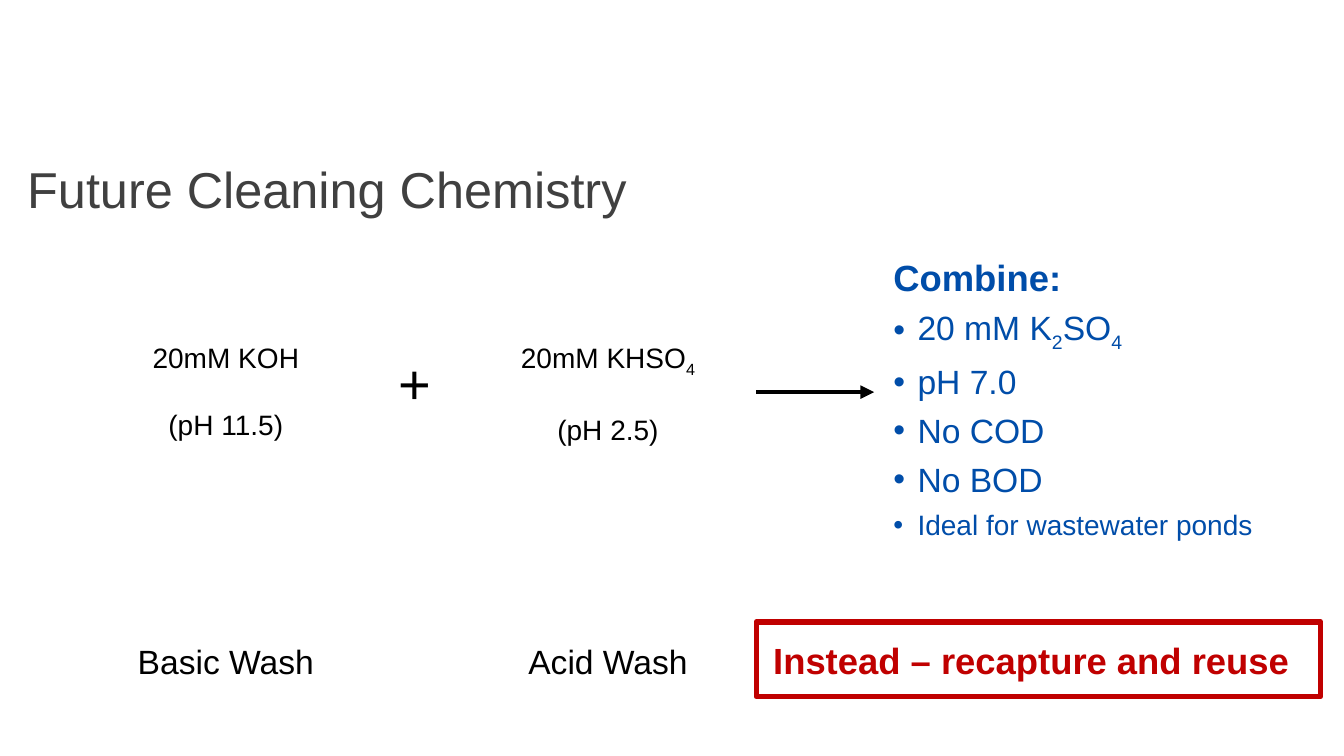
from lxml import etree
from pptx import Presentation
from pptx import util as u
from pptx.dml.color import RGBColor
from pptx.enum import shapes, text
from pptx.oxml.ns import qn

FONT = "Arial"
COLORS = {
    "title": "404040",
    "body": "000000",
    "combine": "004DA9",
    "alert": "C00000",
}
LEFT, CENTER = text.PP_ALIGN.LEFT, text.PP_ALIGN.CENTER


def color(name):
    return RGBColor.from_string(COLORS[name])


def place(shape, box):
    shape.left, shape.top, shape.width, shape.height = map(u.Inches, box)


def set_bullet(para, tint=None, indent=0.0):
    """Give the paragraph a hanging bullet, or none when no tint is named."""
    props = para._p.get_or_add_pPr()
    props.set("marL", str(u.Inches(indent)))
    props.set("indent", str(-u.Inches(indent)))
    if tint is None:
        etree.SubElement(props, qn("a:buNone"))
        return
    bullet_color = etree.SubElement(props, qn("a:buClr"))
    etree.SubElement(bullet_color, qn("a:srgbClr"), val=COLORS[tint])
    etree.SubElement(props, qn("a:buFont"), typeface=FONT)
    etree.SubElement(props, qn("a:buChar"), char="•")


def write(para, words, size=20, tint="body", bold=False, align=LEFT, before=0, line=1.0):
    """Fill a paragraph; parts between underscores become subscripts."""
    para.alignment = align
    para.space_before = u.Pt(before)
    para.line_spacing = line
    for index, part in enumerate(words.split("_")):
        if not part:
            continue
        span = para.add_run()
        span.text = part
        span.font.name = FONT
        span.font.size = u.Pt(size)
        span.font.bold = bold
        span.font.color.rgb = color(tint)
        if index % 2:
            span.font._element.set("baseline", "-25000")


def add_label(parent, box, lines, gap=0, **style):
    label = parent.add_textbox(*map(u.Inches, box))
    frame = label.text_frame
    frame.word_wrap = True
    for index, words in enumerate(lines):
        para = frame.add_paragraph() if index else frame.paragraphs[0]
        write(para, words, before=gap if index else 0, **style)


def add_title(page, box):
    title = page.shapes.title
    place(title, box)
    frame = title.text_frame
    frame.auto_size = text.MSO_AUTO_SIZE.NONE
    frame.vertical_anchor = text.MSO_ANCHOR.MIDDLE
    write(frame.paragraphs[0], "Future Cleaning Chemistry", size=36, tint="title", line=0.9)


def add_wash(page, box, solution, acidity, name):
    """Place a wash solution at the top of the box and its name at the foot."""
    left, top, width, height = box
    add_label(page.shapes, (left, top, width, 1.1), [solution, acidity], gap=24, align=CENTER)
    add_label(page.shapes, (left, top + height - 0.5, width, 0.5), [name], size=24, align=CENTER)


def add_arrow(page, left, right, height):
    arrow = page.shapes.add_connector(
        shapes.MSO_CONNECTOR.STRAIGHT,
        u.Inches(left), u.Inches(height), u.Inches(right), u.Inches(height))
    arrow.line.color.rgb = color("body")
    arrow.line.width = u.Pt(3.25)
    etree.SubElement(arrow.line._get_or_add_ln(), qn("a:tailEnd"), type="triangle")
    etree.SubElement(arrow._element.spPr, qn("a:effectLst"))


def add_combine_list(page, box):
    body = page.placeholders[1]
    place(body, box)
    frame = body.text_frame
    frame.auto_size = text.MSO_AUTO_SIZE.NONE
    heading = frame.paragraphs[0]
    set_bullet(heading)
    write(heading, "Combine:", size=26, tint="combine", bold=True)
    results = [("20 mM K_2_SO_4_", 24), ("pH 7.0", 24), ("No COD", 24),
               ("No BOD", 24), ("Ideal for wastewater ponds", 20)]
    for words, size in results:
        para = frame.add_paragraph()
        set_bullet(para, "combine", 0.24)
        write(para, words, size=size, tint="combine", before=6)


def add_callout(page, box):
    left, top, width, height = box
    group = page.shapes.add_group_shape()
    add_label(group.shapes, (left + 0.07, top + 0.11, width - 0.09, height - 0.12),
              ["Instead – recapture and reuse"], size=26, tint="alert", bold=True)
    border = group.shapes.add_shape(shapes.MSO_SHAPE.RECTANGLE, *map(u.Inches, box))
    border.shadow.inherit = False
    border.fill.background()
    border.line.color.rgb = color("alert")
    border.line.width = u.Pt(3.75)


def main():
    deck = Presentation()
    deck.slide_width, deck.slide_height = u.Inches(13.33), u.Inches(7.5)
    page = deck.slides.add_slide(deck.slide_layouts[1])
    add_title(page, (0.17, 1.33, 11.5, 1.15))
    add_wash(page, (1.19, 3.33, 2.1, 3.48), "20mM KOH", "(pH 11.5)", "Basic Wash")
    add_label(page.shapes, (3.85, 3.41, 0.92, 0.76), ["+"], size=40)
    add_wash(page, (5.04, 3.33, 1.98, 3.48), "20mM KHSO_4_", "(pH 2.5)", "Acid Wash")
    add_arrow(page, 7.5, 8.67, 3.89)
    add_combine_list(page, (8.76, 2.48, 4.59, 3))
    add_callout(page, (7.5, 6.17, 5.6, 0.74))
    deck.save("out.pptx")


if __name__ == "__main__":
    main()
